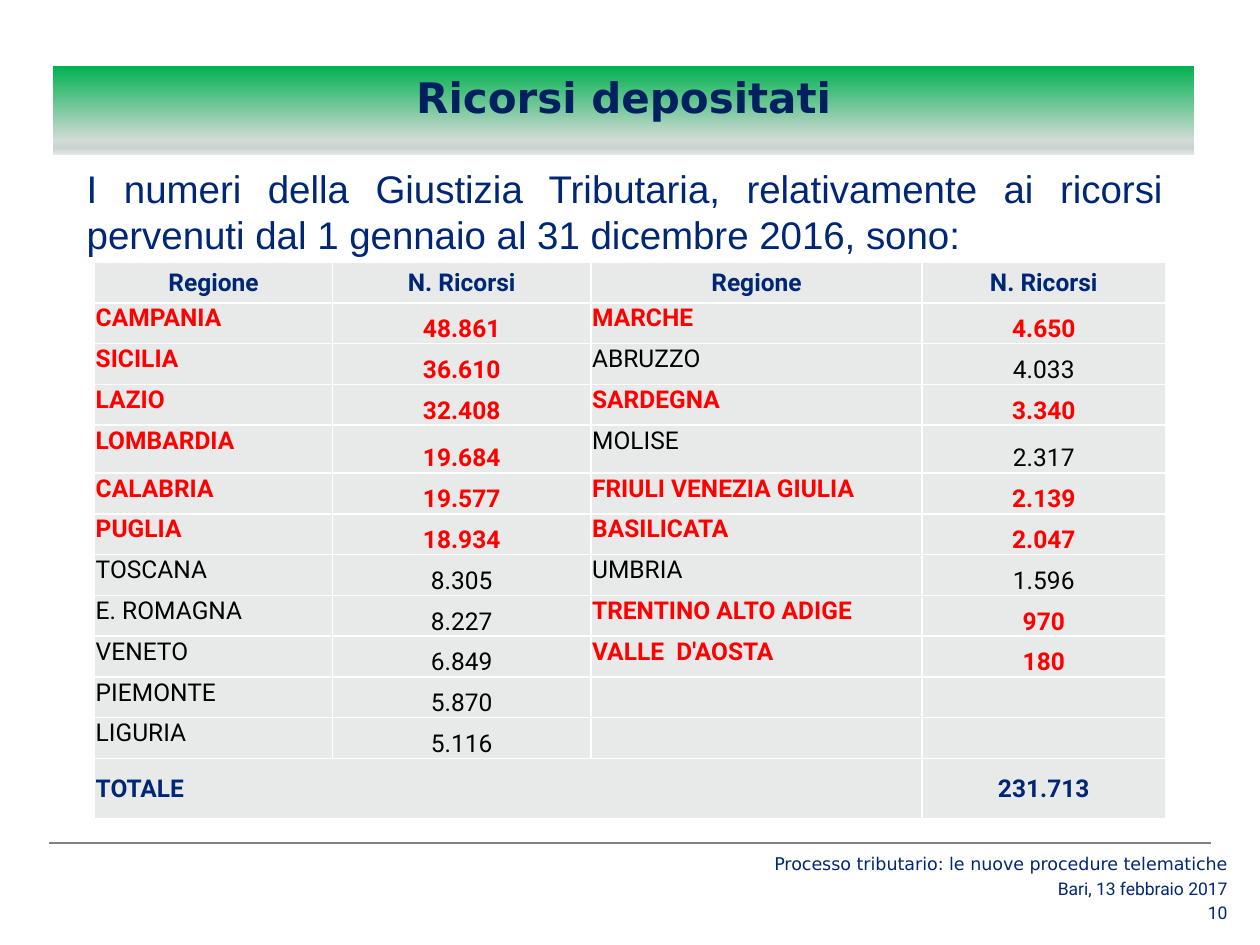
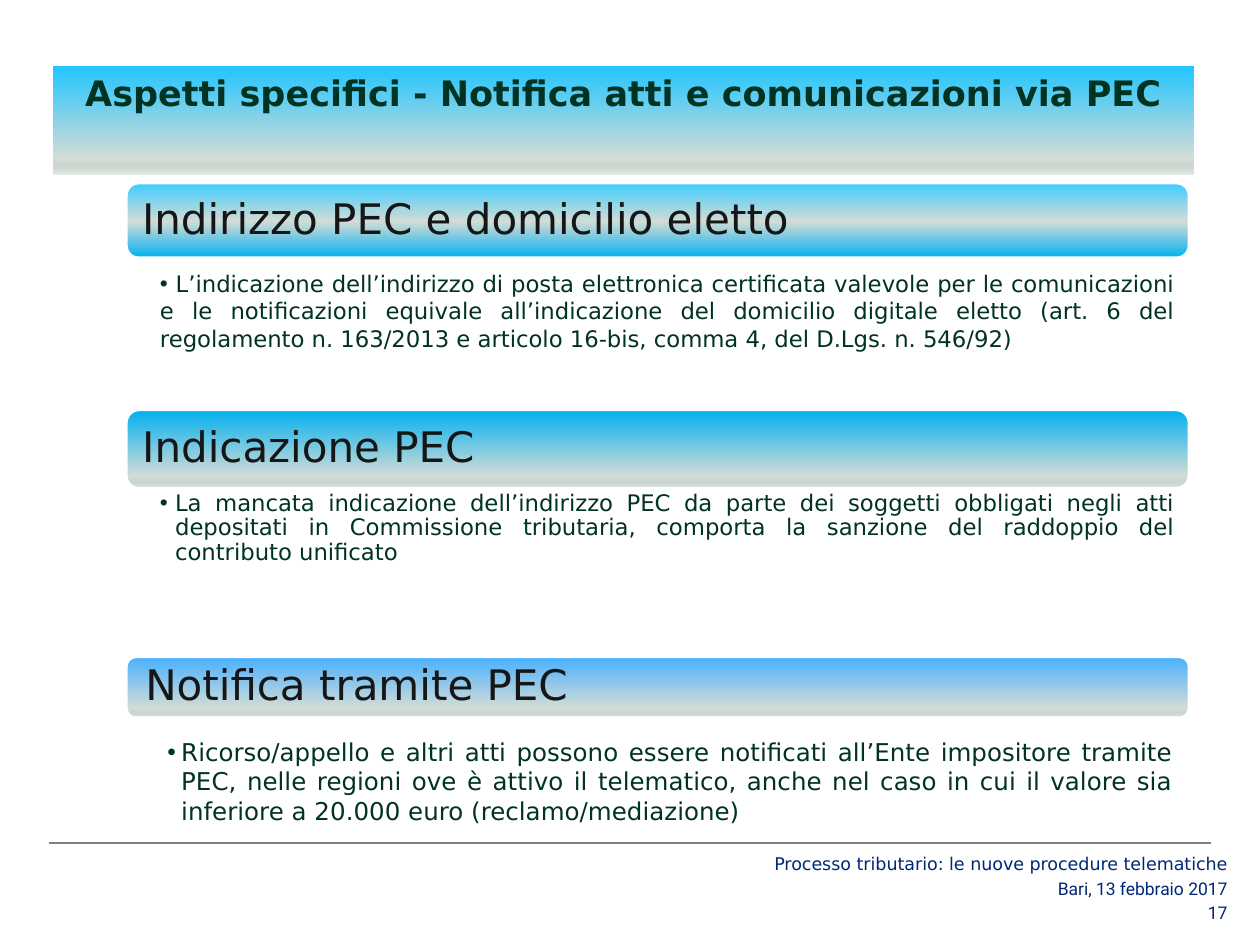
from lxml import etree
from pptx import Presentation
from pptx.dml.color import RGBColor
from pptx.enum import shapes, text
from pptx.oxml.ns import qn
from pptx.util import Inches, Pt

NAVY = RGBColor(0x00, 0x27, 0x76)
DARK_NAVY = RGBColor(0x00, 0x20, 0x60)
DARK_GREEN = RGBColor(0x00, 0x33, 0x22)
INK = RGBColor(0x16, 0x16, 0x16)
RED = RGBColor(0xFF, 0x00, 0x00)
BLACK = RGBColor(0x00, 0x00, 0x00)
WHITE = RGBColor(0xFF, 0xFF, 0xFF)
GREY = RGBColor(0x80, 0x80, 0x80)
CELL_GREY = RGBColor(0xE7, 0xEA, 0xE9)
GREEN = RGBColor(0x00, 0xB0, 0x50)
SKY = RGBColor(0x21, 0xC5, 0xFF)
LIGHT_SKY = RGBColor(0x3B, 0xCC, 0xFF)
CYAN = RGBColor(0x00, 0xB0, 0xF0)
AZURE = RGBColor(0x47, 0xB0, 0xFF)
SILVER = RGBColor(0xD2, 0xDC, 0xD6)
SILVER_DARK = RGBColor(0xC9, 0xD5, 0xCE)
SILVER_LIGHT = RGBColor(0xE2, 0xE8, 0xE4)

SANS, ROBOTO, ARIAL = "DejaVu Sans", "Roboto", "Arial"
LEFT, CENTER, RIGHT, JUSTIFY = (text.PP_ALIGN.LEFT, text.PP_ALIGN.CENTER,
                                text.PP_ALIGN.RIGHT, text.PP_ALIGN.JUSTIFY)
TOP, MIDDLE, BOTTOM = (text.MSO_ANCHOR.TOP, text.MSO_ANCHOR.MIDDLE,
                       text.MSO_ANCHOR.BOTTOM)

FOOTER_TITLE = "Processo tributario: le nuove procedure telematiche"
FOOTER_DATE = "Bari, 13 febbraio 2017"

INTRO = ("I numeri della Giustizia Tributaria, relativamente ai ricorsi "
         "pervenuti dal 1 gennaio al 31 dicembre 2016, sono:")
TABLE_HEADER = ("Regione", "N. Ricorsi")
LEFT_REGIONS = [
    ("CAMPANIA", "48.861"), ("SICILIA", "36.610"), ("LAZIO", "32.408"),
    ("LOMBARDIA", "19.684"), ("CALABRIA", "19.577"), ("PUGLIA", "18.934"),
    ("TOSCANA", "8.305"), ("E. ROMAGNA", "8.227"), ("VENETO", "6.849"),
    ("PIEMONTE", "5.870"), ("LIGURIA", "5.116"),
]
RIGHT_REGIONS = [
    ("MARCHE", "4.650"), ("ABRUZZO", "4.033"), ("SARDEGNA", "3.340"),
    ("MOLISE", "2.317"), ("FRIULI VENEZIA GIULIA", "2.139"),
    ("BASILICATA", "2.047"), ("UMBRIA", "1.596"),
    ("TRENTINO ALTO ADIGE", "970"), ("VALLE  D'AOSTA", "180"),
]
PLAIN_REGIONS = {"TOSCANA", "E. ROMAGNA", "VENETO", "PIEMONTE", "LIGURIA",
                 "ABRUZZO", "MOLISE", "UMBRIA"}
TOTAL = ("TOTALE", "231.713")
COLUMN_WIDTHS = (1.89, 2.05, 2.63, 1.93)
TABLE_HEIGHT, MOLISE_HEIGHT, TOTAL_HEIGHT = 4.42, 0.38, 0.48


def fade_to_silver(color):
    return [(0, color), (84, SILVER), (92, SILVER_DARK), (100, SILVER_LIGHT)]


SECTIONS = [
    dict(heading="Indirizzo PEC e domicilio eletto", top=1.45, height=0.6,
         inset=0.1, stops=[(0, LIGHT_SKY), (51, SILVER), (100, CYAN)],
         detail=" L’indicazione dell’indirizzo di posta elettronica certificata "
                "valevole per le comunicazioni e le notificazioni equivale "
                "all’indicazione del domicilio digitale eletto (art. 6 del "
                "regolamento n. 163/2013 e articolo 16-bis, comma 4, del "
                "D.Lgs. n. 546/92)",
         box=(1, 2.12, 8.44, 1.12), insets=(0.27, 0.02, 0.13, 0.02),
         indent=(0, 0), size=13, spacing=1.0),
    dict(heading="Indicazione PEC", top=3.25, height=0.63,
         inset=0.1, stops=fade_to_silver(CYAN),
         detail="La mancata indicazione dell’indirizzo PEC da parte dei soggetti "
                "obbligati negli atti depositati in Commissione tributaria, "
                "comporta la sanzione del raddoppio del contributo unificato",
         box=(1, 3.88, 8.44, 1.3), insets=(0.27, 0.02, 0.13, 0.02),
         indent=(0.12, -0.12), size=13, spacing=0.9),
    dict(heading="Notifica tramite PEC", top=5.21, height=0.49,
         inset=0.13, stops=fade_to_silver(AZURE),
         detail="Ricorso/appello e altri atti possono essere notificati all’Ente "
                "impositore tramite PEC, nelle regioni ove è attivo il "
                "telematico, anche nel caso in cui il valore sia inferiore a "
                "20.000 euro (reclamo/mediazione)",
         box=(1.14, 5.8, 8.27, 0.79), insets=(0.1, 0.05, 0.1, 0.05),
         indent=(0.2, -0.11), size=14, spacing=1.0),
]


def fill_gradient(shape, stops):
    """Fill from top to bottom with (percent, colour) stops."""
    shape.fill.gradient()
    shape.fill.gradient_angle = 270
    stop_list = shape.fill._xPr.find(qn("a:gradFill")).find(qn("a:gsLst"))
    for old_stop in list(stop_list):
        stop_list.remove(old_stop)
    for percent, color in stops:
        stop = etree.SubElement(stop_list, qn("a:gs"), pos=str(percent * 1000))
        etree.SubElement(stop, qn("a:srgbClr"), val=str(color))


def write(frame, content, font, size, color, align=LEFT, bold=False):
    paragraph = frame.paragraphs[0]
    paragraph.alignment = align
    run = paragraph.add_run()
    run.text = content
    run.font.name, run.font.size, run.font.bold = font, Pt(size), bold
    run.font.color.rgb = color
    return paragraph


def set_frame(frame, anchor=TOP, insets=(0.1, 0.05, 0.1, 0.05)):
    frame.word_wrap = True
    frame.auto_size = text.MSO_AUTO_SIZE.NONE
    frame.vertical_anchor = anchor
    (frame.margin_left, frame.margin_top,
     frame.margin_right, frame.margin_bottom) = map(Inches, insets)
    return frame


def add_text_box(slide, box, **frame_options):
    shape = slide.shapes.add_textbox(*map(Inches, box))
    return set_frame(shape.text_frame, **frame_options)


def set_indent(paragraph, margin, first_line):
    properties = paragraph._p.get_or_add_pPr()
    properties.set("marL", str(Inches(margin)))
    properties.set("indent", str(Inches(first_line)))
    return properties


def add_bullet(paragraph, margin, first_line):
    properties = set_indent(paragraph, margin, first_line)
    etree.SubElement(properties, qn("a:buFont"), typeface=ARIAL)
    etree.SubElement(properties, qn("a:buChar"), char="•")


def add_footer(slide, number):
    rule = slide.shapes.add_connector(
        shapes.MSO_CONNECTOR.STRAIGHT,
        Inches(0.39), Inches(6.69), Inches(9.61), Inches(6.69))
    rule.line.color.rgb, rule.line.width = GREY, Pt(0.75)
    etree.SubElement(rule._element.spPr, qn("a:effectLst"))
    lines = [(FOOTER_TITLE, SANS, 5.94, 6.75, 0.2),
             (FOOTER_DATE, ROBOTO, 6.73, 6.97, 0.16),
             (str(number), ROBOTO, 6.73, 7.16, 0.16)]
    for content, font, left, top, height in lines:
        frame = add_text_box(slide, (left, top, 9.84 - left, height),
                             anchor=MIDDLE)
        write(frame, content, font, 10, NAVY, RIGHT)


def add_slide(presentation, number, title, band_color, band_height, size, color):
    slide = presentation.slides.add_slide(presentation.slide_layouts[5])
    band = slide.shapes.title
    band.left, band.top = Inches(0.42), Inches(0.52)
    band.width, band.height = Inches(9.06), Inches(band_height)
    fill_gradient(band, fade_to_silver(band_color))
    write(set_frame(band.text_frame), title, SANS, size, color, CENTER, True)
    add_footer(slide, number)
    return slide


def add_borders(cell, color, width):
    properties = cell._tc.get_or_add_tcPr()
    for side in ("lnL", "lnR", "lnT", "lnB"):
        line = etree.SubElement(properties, qn(f"a:{side}"), w=str(Pt(width)))
        fill = etree.SubElement(line, qn("a:solidFill"))
        etree.SubElement(fill, qn("a:srgbClr"), val=str(color))


def write_cell(cell, content, color, align, anchor, bold):
    cell.vertical_anchor = anchor
    write(cell.text_frame, content, ROBOTO, 14, color, align, bold)


def add_regions_table(slide):
    row_count = len(LEFT_REGIONS) + 2
    table = slide.shapes.add_table(
        row_count, len(COLUMN_WIDTHS), Inches(0.75), Inches(2.08),
        Inches(sum(COLUMN_WIDTHS)), Inches(TABLE_HEIGHT)).table
    table.first_row = table.horz_banding = False
    for column, width in zip(table.columns, COLUMN_WIDTHS):
        column.width = Inches(width)
    row_height = (TABLE_HEIGHT - MOLISE_HEIGHT - TOTAL_HEIGHT) / (row_count - 2)
    for row in table.rows:
        row.height = Inches(row_height)
    table.rows[4].height = Inches(MOLISE_HEIGHT)
    table.rows[row_count - 1].height = Inches(TOTAL_HEIGHT)

    for cell in table.iter_cells():
        add_borders(cell, WHITE, 1)
        cell.fill.solid()
        cell.fill.fore_color.rgb = CELL_GREY
        cell.margin_left = cell.margin_top = cell.margin_right = Inches(0.01)
        cell.margin_bottom = 0

    for index, label in enumerate(TABLE_HEADER * 2):
        write_cell(table.cell(0, index), label, NAVY, CENTER, MIDDLE, True)
    for first_column, regions in ((0, LEFT_REGIONS), (2, RIGHT_REGIONS)):
        for index, (region, appeals) in enumerate(regions, start=1):
            bold = region not in PLAIN_REGIONS
            color = RED if bold else BLACK
            write_cell(table.cell(index, first_column),
                       region, color, LEFT, TOP, bold)
            write_cell(table.cell(index, first_column + 1),
                       appeals, color, CENTER, BOTTOM, bold)

    last = row_count - 1
    table.cell(last, 0).merge(table.cell(last, 2))
    write_cell(table.cell(last, 0), TOTAL[0], NAVY, LEFT, MIDDLE, True)
    write_cell(table.cell(last, 3), TOTAL[1], NAVY, CENTER, MIDDLE, True)


def add_section(slide, section):
    bar = slide.shapes.add_shape(
        shapes.MSO_SHAPE.ROUNDED_RECTANGLE, Inches(1), Inches(section["top"]),
        Inches(8.44), Inches(section["height"]))
    bar.shadow.inherit = False
    fill_gradient(bar, section["stops"])
    bar.line.color.rgb, bar.line.width = WHITE, Pt(2)
    frame = set_frame(bar.text_frame, MIDDLE, (section["inset"], 0, 0.1, 0))
    heading = write(frame, section["heading"], SANS, 24, INK)
    heading.line_spacing = 0.9

    frame = add_text_box(slide, section["box"], insets=section["insets"])
    add_bullet(frame.paragraphs[0], *section["indent"])
    detail = write(frame, section["detail"], SANS, section["size"],
                   DARK_GREEN, JUSTIFY)
    detail.line_spacing = section["spacing"]


def main():
    presentation = Presentation()
    presentation.slide_width, presentation.slide_height = Inches(10), Inches(7.5)

    slide = add_slide(presentation, 10, "Ricorsi depositati",
                      GREEN, 0.71, 24, DARK_NAVY)
    frame = add_text_box(slide, (0.39, 1.26, 8.94, 0.8))
    set_indent(write(frame, INTRO, ARIAL, 22, NAVY, JUSTIFY), 0.2, 0)
    add_regions_table(slide)

    slide = add_slide(presentation, 17,
                      "Aspetti specifici - Notifica atti e comunicazioni via PEC",
                      SKY, 0.87, 20, DARK_GREEN)
    for section in SECTIONS:
        add_section(slide, section)

    presentation.save("out.pptx")


if __name__ == "__main__":
    main()
